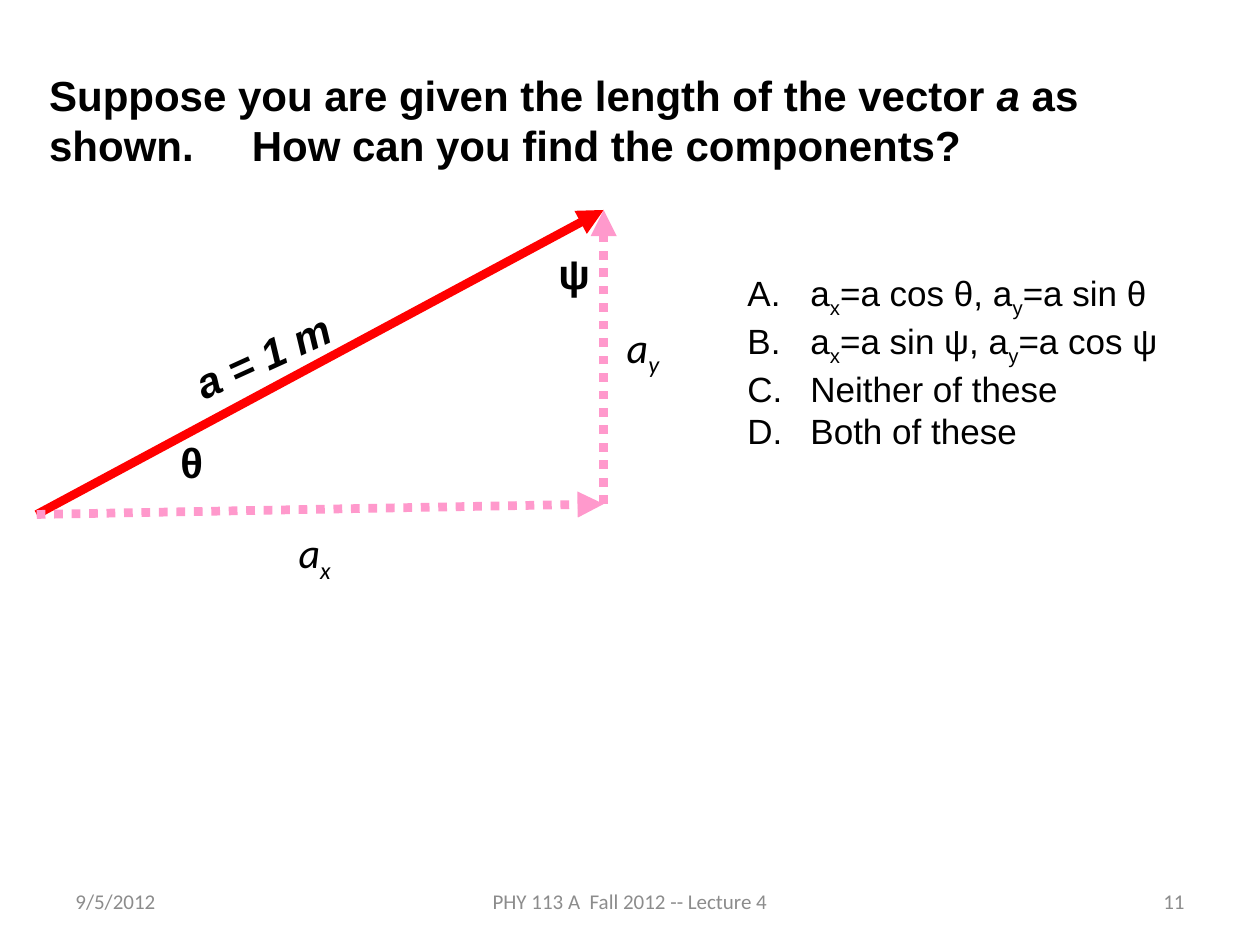
from lxml.etree import SubElement
from pptx import Presentation
from pptx.dml.color import RGBColor
from pptx.enum.dml import MSO_LINE as Dash
from pptx.enum.shapes import MSO_CONNECTOR as Conn
from pptx.enum.text import MSO_ANCHOR as Anchor, MSO_AUTO_SIZE as Fit, PP_ALIGN as Align
from pptx.oxml.ns import qn
from pptx.util import Inches, Pt

COLORS = {"ink": "000000", "footer": "8C8C8C", "vector": "FF0000", "component": "FF99CC"}
COLS, ROWS = 120, 90
SUB = {"sub": True}


def add_run(p, text, font="Arial", size=24, color="ink", bold=False, italic=False, sub=False):
    r = p.add_run()
    r.text = text
    r.font.name = font
    r.font.size = Pt(size)
    r.font.bold = bold
    r.font.italic = italic
    r.font.color.rgb = RGBColor.from_string(COLORS[color])
    if sub:
        r.font._element.set("baseline", "-25000")


class SlideBuilder:
    def __init__(self, prs):
        self.cell_w = prs.slide_width / COLS
        self.cell_h = prs.slide_height / ROWS
        self.s = prs.slides.add_slide(prs.slide_layouts[6])
        self.shapes = self.s.shapes

    def x(self, cols):
        return round(cols * self.cell_w)

    def y(self, rows):
        return round(rows * self.cell_h)

    def text(self, box, *paragraphs, shapes=None, align=Align.LEFT, anchor=Anchor.TOP,
             wrap=True, grow=True, rotation=0, **style):
        left, top, width, height = box
        sp = (shapes or self.shapes).add_textbox(
            self.x(left), self.y(top), self.x(width), self.y(height))
        sp.rotation = rotation
        tf = sp.text_frame
        tf.word_wrap = wrap
        tf.auto_size = Fit.SHAPE_TO_FIT_TEXT if grow else Fit.NONE
        tf.vertical_anchor = anchor
        for i, pieces in enumerate(paragraphs):
            p = tf.add_paragraph() if i else tf.paragraphs[0]
            p.alignment = align
            for text, changes in pieces:
                add_run(p, text, **{**style, **changes})
        return tf

    def tab_stop(self, p, cols):
        tabs = SubElement(p._p.get_or_add_pPr(), qn("a:tabLst"))
        SubElement(tabs, qn("a:tab"), pos=str(self.x(cols)), algn="l")

    def lettered(self, tf, indent):
        for p in tf.paragraphs:
            pPr = p._p.get_or_add_pPr()
            pPr.set("marL", str(self.x(indent)))
            pPr.set("indent", str(-self.x(indent)))
            SubElement(pPr, qn("a:buFont"), typeface="+mj-lt")
            SubElement(pPr, qn("a:buAutoNum"), type="alphaUcPeriod")

    def arrow(self, shapes, start, end, color, dash=None):
        line = shapes.add_connector(
            Conn.STRAIGHT, self.x(start[0]), self.y(start[1]), self.x(end[0]), self.y(end[1]))
        line.line.color.rgb = RGBColor.from_string(COLORS[color])
        line.line.width = Pt(5)
        if dash:
            line.line.dash_style = dash
        SubElement(line.line._get_or_add_ln(), qn("a:tailEnd"), type="triangle")
        SubElement(line._element.spPr, qn("a:effectLst"))

    def footer(self, left, width, text, align):
        self.text((left, 83.4, width, 4.8), [(text, {})], align=align, anchor=Anchor.MIDDLE,
                  grow=False, font="Calibri", size=12, color="footer")

    def triangle(self):
        group = self.shapes.add_group_shape().shapes
        origin, corner, tip = (3.5, 49), (57.5, 48), (57.5, 20)
        self.arrow(group, origin, tip, "vector")
        for start, end in ((origin, corner), (corner, tip)):
            self.arrow(group, start, end, "component", Dash.ROUND_DOT)
        for box, axis, wrap in (((27.25, 49.6, 5.6, 6), "x", False),
                                ((58.5, 30, 8.5, 6), "y", True)):
            self.text(box, [("a", {}), (axis, SUB)], shapes=group, wrap=wrap,
                      font="Calibri", italic=True)


def component_answer(x_function, y_function):
    return [("a", {}), ("x", SUB), (f"=a {x_function}, a", {}),
            ("y", SUB), (f"=a {y_function}", {})]


def main():
    prs = Presentation()
    prs.slide_width, prs.slide_height = Inches(10), Inches(7.5)
    slide = SlideBuilder(prs)

    slide.footer(6, 28, "9/5/2012", Align.LEFT)
    slide.footer(41, 38, "PHY 113 A  Fall 2012 -- Lecture 4", Align.CENTER)
    slide.footer(86, 28, "11", Align.RIGHT)

    slide.triangle()
    for left, top, angle in ((16, 41, "θ"), (52, 23, "ψ")):
        slide.text((left, top, 5, 6), [(angle, {})], bold=True)
    slide.text((16.7, 29.6, 22.2, 6), [("a = 1 m", {})], rotation=335.5, bold=True, italic=True)

    question = slide.text(
        (3.5, 6, 104.5, 10.9),
        [("Suppose you are given the length of the vector ", {}), ("a", {"italic": True}),
         (" as shown.\tHow can you find the components?", {})],
        bold=True)
    slide.tab_stop(question.paragraphs[0], 19.3)

    answers = slide.text(
        (70, 25.3, 44, 17.4),
        component_answer("cos θ", "sin θ"),
        component_answer("sin ψ", "cos ψ"),
        [("Neither of these", {})],
        [("Both of these", {})],
        size=20)
    slide.lettered(answers, 6)

    prs.save("out.pptx")


if __name__ == "__main__":
    main()
